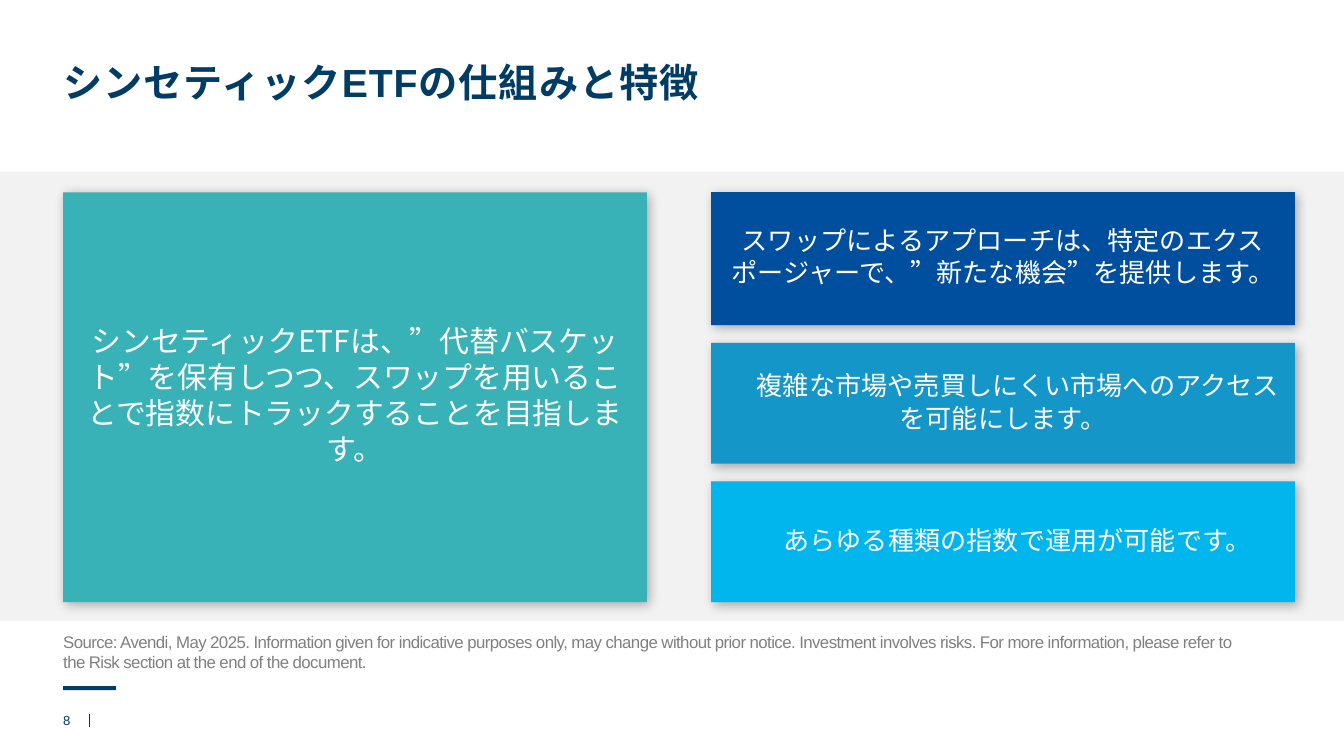
from dataclasses import dataclass

from lxml.etree import SubElement
from pptx import Presentation
from pptx.dml.color import RGBColor
from pptx.enum.shapes import MSO_CONNECTOR, MSO_SHAPE
from pptx.enum.text import MSO_ANCHOR, PP_ALIGN
from pptx.oxml.ns import qn
from pptx.util import Pt


@dataclass(frozen=True)
class Theme:
    navy: str = "003C64"
    band: str = "F2F2F2"
    grey: str = "808080"
    white: str = "FFFFFF"
    teal: str = "38B2B6"
    blue: str = "004F9F"
    azure: str = "1596C8"
    sky: str = "00B6ED"
    latin: str = "Arial"
    japanese: str = "Noto Sans CJK JP"
    title_size: float = 21
    lead_size: float = 16
    card_size: float = 14
    source_size: float = 9
    number_size: float = 7


class SlideBuilder:
    def __init__(self, presentation, theme):
        self.theme = theme
        self.slide = presentation.slides.add_slide(presentation.slide_layouts[6])

    def run(self, paragraph, text, size, color, font, bold=False, spacing=0):
        run = paragraph.add_run()
        run.text = text
        run.font.size = Pt(size)
        run.font.bold = bold
        run.font.name = font
        run.font.color.rgb = RGBColor.from_string(color)
        properties = run.font._element
        if spacing:
            properties.set("spc", str(round(spacing * 100)))
        SubElement(properties, qn("a:ea")).set("typeface", self.theme.japanese)

    def text(self, box, text, size, color, bold=False, spacing=0,
             line_spacing=None, anchor=MSO_ANCHOR.TOP):
        text_box = self.slide.shapes.add_textbox(*map(Pt, box))
        frame = text_box.text_frame
        frame.word_wrap = True
        frame.vertical_anchor = anchor
        frame.margin_left = frame.margin_right = Pt(0)
        frame.margin_top = frame.margin_bottom = Pt(0)
        paragraph = frame.paragraphs[0]
        if line_spacing:
            paragraph.line_spacing = line_spacing
        self.run(paragraph, text, size, color, self.theme.latin, bold, spacing)

    def rectangle(self, box, fill):
        shape = self.slide.shapes.add_shape(MSO_SHAPE.RECTANGLE, *map(Pt, box))
        shape.shadow.inherit = False
        shape.fill.solid()
        shape.fill.fore_color.rgb = RGBColor.from_string(fill)
        shape.line.fill.background()
        return shape

    def card(self, box, fill, text, size, first_indent=0, line_spacing=None):
        shape = self.rectangle(box, fill)
        self.shadow(shape)
        frame = shape.text_frame
        frame.word_wrap = True
        frame.vertical_anchor = MSO_ANCHOR.MIDDLE
        frame.margin_left = frame.margin_right = Pt(7.2)
        frame.margin_top, frame.margin_bottom = Pt(0), Pt(2.88)
        paragraph = frame.paragraphs[0]
        paragraph.alignment = PP_ALIGN.CENTER
        if line_spacing:
            paragraph.line_spacing = line_spacing
        if first_indent:
            properties = paragraph._p.get_or_add_pPr()
            properties.set("marL", "0")
            properties.set("indent", str(Pt(first_indent)))
        self.run(paragraph, text, size, self.theme.white, self.theme.japanese)

    def shadow(self, shape):
        effects = shape._element.spPr.find(qn("a:effectLst"))
        outer = SubElement(effects, qn("a:outerShdw"), blurRad=str(Pt(6)),
                           dist=str(Pt(2)), dir=str(45 * 60000),
                           algn="tl", rotWithShape="0")
        color = SubElement(outer, qn("a:srgbClr"), val="000000")
        SubElement(color, qn("a:alpha"), val="30000")

    def line(self, start, end, color, width):
        connector = self.slide.shapes.add_connector(
            MSO_CONNECTOR.STRAIGHT, *map(Pt, (*start, *end)))
        connector.line.color.rgb = RGBColor.from_string(color)
        connector.line.width = Pt(width)
        SubElement(connector._element.spPr, qn("a:effectLst"))


def main():
    theme = Theme()
    presentation = Presentation()
    presentation.slide_width = Pt(720)
    presentation.slide_height = Pt(405)
    builder = SlideBuilder(presentation, theme)

    left, right = 33.84, 381
    top, bottom = 103, 322.6
    card_width, gap = 312.7, 9.5

    builder.rectangle((left, 367.6, 28.2, 2.2), theme.navy)
    builder.line((47.7, 382.4), (47.7, 389.6), theme.navy, 0.5)
    builder.text((left, 33.84, 652.3, 23), "シンセティックETFの仕組みと特徴",
                 theme.title_size, theme.navy, bold=True, spacing=0.5,
                 line_spacing=0.9, anchor=MSO_ANCHOR.MIDDLE)
    builder.text((left, 381.9, 13, 10.8), "8", theme.number_size, theme.navy)
    builder.rectangle((0, 92, 720, 240.6), theme.band)
    builder.text((left, 338.4, 635, 25.2),
                 "Source: Avendi, May 2025. Information given for indicative purposes only, "
                 "may change without prior notice. Investment involves risks. For more "
                 "information, please refer to the Risk section at the end of the document.",
                 theme.source_size, theme.grey, spacing=-0.3)

    builder.card((left, top, card_width, bottom - top), theme.teal,
                 "シンセティックETFは、”代替バスケット”を保有しつつ、"
                 "スワップを用いることで指数にトラックすることを目指します。",
                 theme.lead_size)
    benefits = [
        (71.2, theme.blue, 0, None,
         "スワップによるアプローチは、特定のエクスポージャーで、”新たな機会”を提供します。"),
        (64.7, theme.azure, 16, 1.07,
         "複雑な市場や売買しにくい市場へのアクセスを可能にします。"),
        (64.7, theme.sky, 16, 1.07, "あらゆる種類の指数で運用が可能です。"),
    ]
    for height, fill, first_indent, line_spacing, text in benefits:
        builder.card((right, top, card_width, height), fill, text,
                     theme.card_size, first_indent, line_spacing)
        top += height + gap

    presentation.save("out.pptx")


if __name__ == "__main__":
    main()
